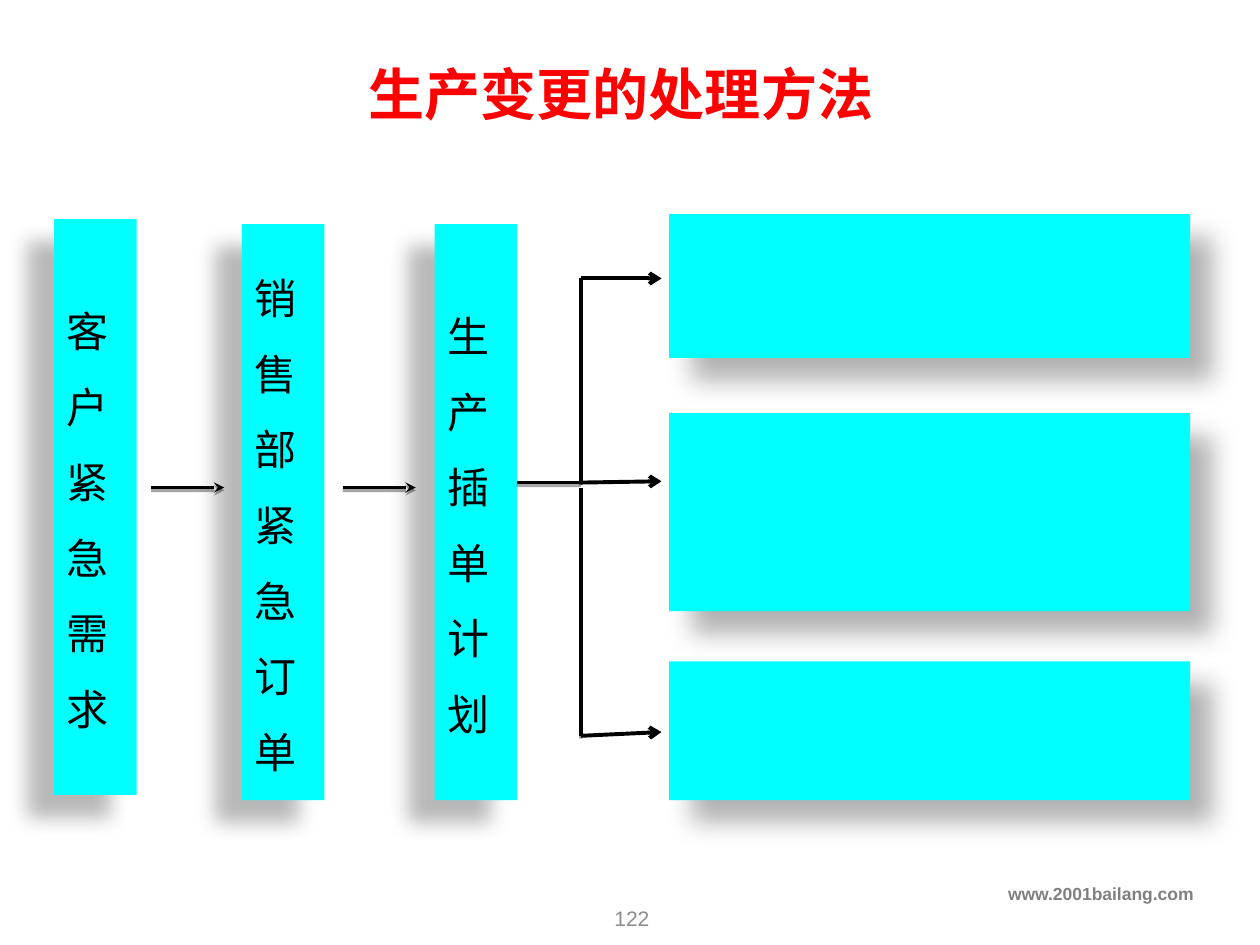
from lxml import etree
from pptx import Presentation
from pptx.dml.color import RGBColor
from pptx.enum.shapes import MSO_CONNECTOR, MSO_SHAPE
from pptx.enum.text import MSO_ANCHOR, PP_ALIGN
from pptx.oxml.ns import qn
from pptx.util import Inches, Pt

RED = RGBColor(0xFF, 0, 0)
CYAN = RGBColor(0, 0xFF, 0xFF)
BLACK = RGBColor(0, 0, 0)
GREY = RGBColor(0x80, 0x80, 0x80)
PALE = RGBColor(0x8C, 0x8C, 0x8C)

RECT = MSO_SHAPE.RECTANGLE
LINE = MSO_CONNECTOR.STRAIGHT
TOP, MID = MSO_ANCHOR.TOP, MSO_ANCHOR.MIDDLE
LEFT, CENTER, RIGHT = PP_ALIGN.LEFT, PP_ALIGN.CENTER, PP_ALIGN.RIGHT

# The grid has 100 columns and 75 rows
WIDE, HIGH = Inches(10), Inches(7.5)
COL, ROW = WIDE / 100, HIGH / 75

# Shadows: opacity in percent, blur and distance in points, angle in degrees
FALL_LEFT = (28, 11.8, 19.7, 141)
FALL_RIGHT = (30, 15, 18, 45)
FALL_DOWN = (34, 0, 1.6, 90)


class Board:
    cjk = "Noto Sans CJK SC"
    latin = "Arial"

    def __init__(self, deck):
        self.slide = deck.slides.add_slide(deck.slide_layouts[6])
        self.shapes = self.slide.shapes

    def scale(self, *spots):
        """Turn pairs of columns and rows into lengths."""
        return [round(n * (ROW if i % 2 else COL)) for i, n in enumerate(spots)]

    def shade(self, item, cast):
        """Give an item its own effect list, with a shadow if one is cast."""
        props = item._element.spPr
        effects = etree.SubElement(props, qn("a:effectLst"))
        if cast:
            alpha, blur, dist, angle = cast
            outer = etree.SubElement(
                effects, qn("a:outerShdw"), blurRad=str(Pt(blur)),
                dist=str(Pt(dist)), dir=str(angle * 60000),
                algn="ctr", rotWithShape="0")
            tint = etree.SubElement(outer, qn("a:srgbClr"), val=str(BLACK))
            etree.SubElement(tint, qn("a:alpha"), val=str(alpha * 1000))

    def ink(self, para, text, color, form):
        run = para.add_run()
        run.text = text
        for key, value in form.items():
            setattr(run.font, key, value)
        run.font.color.rgb = color
        etree.SubElement(run._r.get_or_add_rPr(), qn("a:ea"), typeface=self.cjk)

    def label(self, area, text, color, size, align, anchor=MID, bold=False):
        frame = self.shapes.add_textbox(*self.scale(*area)).text_frame
        frame.word_wrap = True
        frame.vertical_anchor = anchor
        para = frame.paragraphs[0]
        para.alignment = align
        form = {"name": self.latin, "size": Pt(size), "bold": bold}
        self.ink(para, text, color, form)

    def box(self, area, cast):
        item = self.shapes.add_shape(RECT, *self.scale(*area))
        item.fill.solid()
        item.fill.fore_color.rgb = CYAN
        item.line.fill.background()
        self.shade(item, cast)
        return item

    def pillar(self, area, word):
        """A tall box with one character on each line."""
        frame = self.box(area, FALL_LEFT).text_frame
        frame.word_wrap = False
        frame.vertical_anchor = MID
        form = {"name": self.cjk, "size": Pt(24)}
        for spot, char in enumerate(word):
            para = frame.add_paragraph() if spot else frame.paragraphs[0]
            para.alignment = LEFT
            para.line_spacing = 1.5
            props = para._p.get_or_add_pPr()
            props.set("marL", str(Inches(0.5)))
            props.set("indent", str(-Inches(0.5)))
            self.ink(para, char, BLACK, form)

    def link(self, start, end, width=2, head=None, cast=FALL_DOWN):
        item = self.shapes.add_connector(LINE, *self.scale(*start, *end))
        item.line.color.rgb = BLACK
        item.line.width = Pt(width)
        if head:
            etree.SubElement(item.line._ln, qn("a:tailEnd"), type=head)
        self.shade(item, cast)


def main():
    deck = Presentation()
    deck.slide_width, deck.slide_height = WIDE, HIGH
    board = Board(deck)

    # Title, web address and page number
    board.label((0, 69.6, 95.7, 3.5), "www.2001bailang.com", GREY, 10, RIGHT,
                TOP, True)
    board.label((13.9, 3.9, 70.8, 6.9), "生产变更的处理方法", RED, 32, CENTER,
                bold=True)
    board.label((38.9, 70.9, 22.5, 4), "122", PALE, 12, CENTER)

    # Three steps
    steps = [(4.3, 17.4, "客户紧急需求"), (19.2, 17.8, "销售部紧急订单"),
             (34.5, 17.8, "生产插单计划")]
    for x, y, word in steps:
        board.pillar((x, y, 6.55, 45.7), word)

    # Three outcomes
    for y, h in [(17, 11.4), (32.8, 15.7), (52.5, 11)]:
        board.box((53.1, y, 41.35, h), FALL_RIGHT)

    # Arrows between the steps
    for x in (12, 27.2):
        board.link((x, 38.7), (x + 5.8, 38.7), head="stealth")

    # Trunk and branches to the outcomes
    fork, mid, high, low = 46.1, 38.3, 22.1, 58.4
    board.link((41, mid), (fork, mid))
    board.link((fork, mid), (fork, high))
    board.link((fork, 38.7), (fork, low))
    for y, end in [(high, high), (mid, 38.2), (low, 58.1)]:
        board.link((fork, y), (52.5, end), 2.25, "arrow", None)

    deck.save("out.pptx")


if __name__ == "__main__":
    main()
